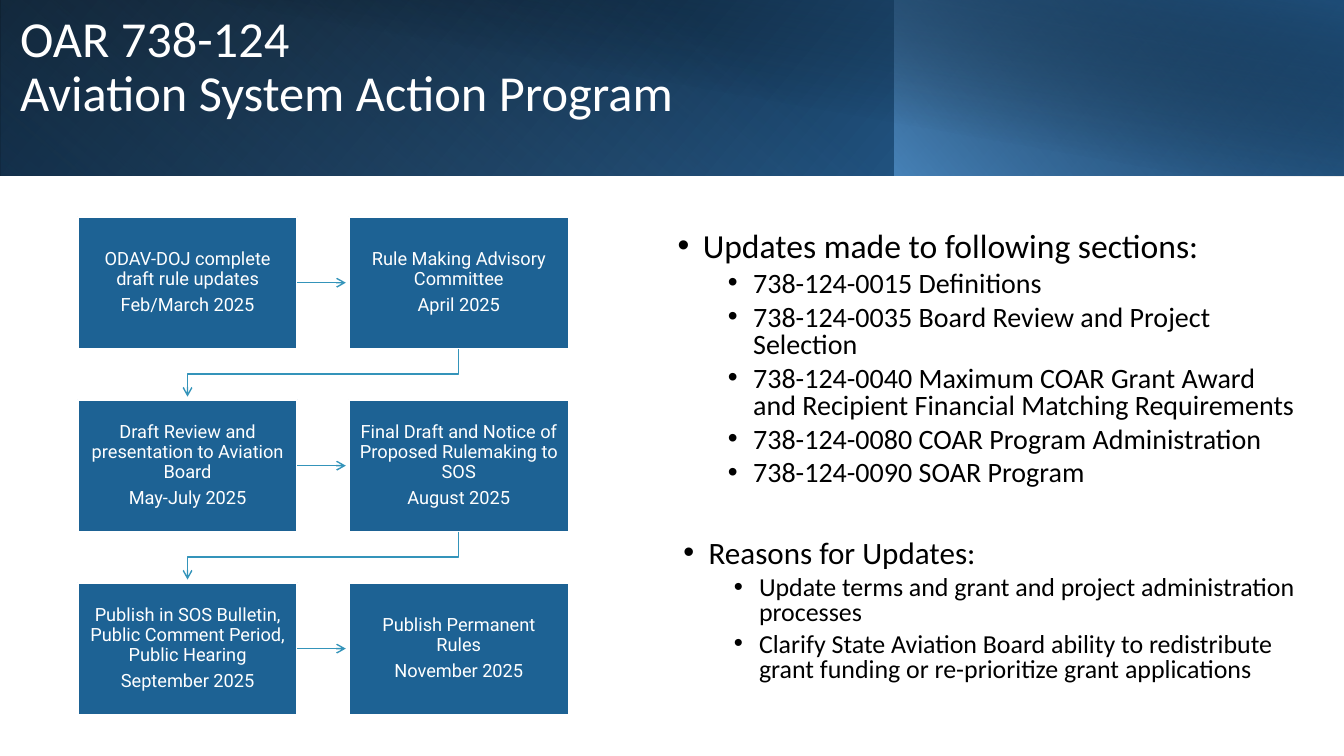
from lxml import etree
from pptx import Presentation
from pptx import util as u
from pptx.dml.color import RGBColor
from pptx.enum import shapes, text
from pptx.oxml.ns import qn

TITLE = "OAR 738-124\vAviation System Action Program"
SECTIONS = [
    "Updates made to following sections:",
    "738-124-0015 Definitions",
    "738-124-0035 Board Review and Project Selection",
    "738-124-0040 Maximum COAR Grant Award and Recipient Financial Matching Requirements",
    "738-124-0080 COAR Program Administration",
    "738-124-0090 SOAR Program",
]
REASONS = [
    "Reasons for Updates:",
    "Update terms and grant and project administration processes",
    "Clarify State Aviation Board ability to redistribute grant funding "
    "or re-prioritize grant applications",
]
STEPS = [
    ("ODAV-DOJ complete draft rule updates", "Feb/March 2025"),
    ("Rule Making Advisory Committee", "April 2025"),
    ("Draft Review and presentation to Aviation Board", "May-July 2025"),
    ("Final Draft and Notice of Proposed Rulemaking to SOS", "August 2025"),
    ("Publish in SOS Bulletin, Public Comment Period, Public Hearing", "September 2025"),
    ("Publish Permanent Rules", "November 2025"),
]
# left, width, height, rotation, flipped, clockwise angle, (position %, colour, opacity %)
BANDS = [
    (0, 13.33, 1.74, 0, True, 140, [(0, "000000", 100), (100, "2E75B6", 100)]),
    (0, 8.88, 1.74, 180, True, 230, [(20, "5B9BD5", 0), (100, "1F4E79", 55)]),
    (8.87, 4.46, 1.74, 0, True, 220, [(0, "5B9BD5", 66), (100, "000000", 30)]),
    (0.5, 12.83, 1.75, 0, False, 280, [(50, "000000", 0), (99, "1F4E79", 52)]),
]
BOX_WIDTH, BOX_HEIGHT = 2.18, 1.31
FLOW_LEFT, FLOW_TOP = 0.77, 2.15
COLUMN_STEP, ROW_STEP = 2.69, 3.63 / 2
ARROW_GAP = 0.03
BLUE, TEAL, WHITE, BLACK = "1D6294", "3494BA", "FFFFFF", "000000"


def color(value):
    return RGBColor.from_string(value)


def place(shape, left, top, width, height):
    shape.left, shape.top = u.Inches(left), u.Inches(top)
    shape.width, shape.height = u.Inches(width), u.Inches(height)


def format_runs(paragraph, font, size, value):
    for run in paragraph.runs:
        run.font.name, run.font.size = font, u.Pt(size)
        run.font.color.rgb = color(value)


def add_band(slide, left, width, height, rotation, flipped, angle, stops):
    band = slide.shapes.add_shape(
        shapes.MSO_SHAPE.RECTANGLE, u.Inches(left), 0, u.Inches(width), u.Inches(height))
    band.shadow.inherit = False
    band.line.fill.background()
    band.rotation = rotation
    if flipped:
        band._element.spPr.find(qn("a:xfrm")).set("flipH", "1")
    band.fill.gradient()
    band.fill.gradient_angle = 360 - angle
    for stop, (position, value, _) in zip(band.fill.gradient_stops, stops):
        stop.position = position / 100
        stop.color.rgb = color(value)
    for element, (_, _, opacity) in zip(band._element.spPr.iter(qn("a:srgbClr")), stops):
        etree.SubElement(element, qn("a:alpha"), val=str(opacity * 1000))


def fill_list(shape, lines, head_size, item_size):
    """Write a bulleted heading followed by second-level bullets."""
    frame = shape.text_frame
    frame.word_wrap = True
    frame.auto_size = text.MSO_AUTO_SIZE.NONE
    frame.text = "\n".join(lines)
    for index, paragraph in enumerate(frame.paragraphs):
        item = index > 0
        paragraph.level = int(item)
        paragraph.line_spacing = 0.8
        paragraph.space_before = u.Pt(5 if item else 10)
        format_runs(paragraph, "Calibri", item_size if item else head_size, BLACK)
        properties = paragraph._p.get_or_add_pPr()
        properties.set("marL", str(u.Inches(0.75 if item else 0.25)))
        properties.set("indent", str(u.Inches(-0.25)))
        etree.SubElement(properties, qn("a:buFont"), typeface="Arial")
        etree.SubElement(properties, qn("a:buChar"), char="•")


def add_step(slide, left, top, lines):
    box = slide.shapes.add_shape(
        shapes.MSO_SHAPE.RECTANGLE, u.Inches(left), u.Inches(top),
        u.Inches(BOX_WIDTH), u.Inches(BOX_HEIGHT))
    box.shadow.inherit = False
    box.fill.solid()
    box.fill.fore_color.rgb = color(BLUE)
    box.line.color.rgb = color(WHITE)
    box.line.width = u.Pt(1.5)
    frame = box.text_frame
    frame.word_wrap = True
    frame.vertical_anchor = text.MSO_ANCHOR.MIDDLE
    frame.margin_left = frame.margin_right = u.Inches(0.1)
    frame.margin_top = frame.margin_bottom = u.Inches(0.1)
    frame.text = "\n".join(lines)
    for paragraph in frame.paragraphs:
        paragraph.alignment = text.PP_ALIGN.CENTER
        paragraph.line_spacing = 0.9
        paragraph.space_after = u.Pt(4.5)
        format_runs(paragraph, "Roboto", 13, WHITE)
    return box


def style_arrow(arrow):
    arrow.line.color.rgb = color(TEAL)
    arrow.line.width = u.Pt(1)
    etree.SubElement(arrow.line._get_or_add_ln(), qn("a:tailEnd"), type="arrow")
    etree.SubElement(arrow._element.spPr, qn("a:effectLst"))


def add_arrow_across(slide, box, left, top):
    middle = u.Inches(top + BOX_HEIGHT / 2)
    arrow = slide.shapes.add_connector(
        shapes.MSO_CONNECTOR.STRAIGHT, u.Inches(left + BOX_WIDTH), middle,
        u.Inches(left + COLUMN_STEP - ARROW_GAP), middle)
    arrow.begin_connect(box, 3)
    style_arrow(arrow)


def add_arrow_to_next_row(slide, left, top):
    start_x = left + BOX_WIDTH / 2
    end_x = start_x - COLUMN_STEP
    start_y, end_y = top + BOX_HEIGHT, top + ROW_STEP - ARROW_GAP
    bend_y = (start_y + top + ROW_STEP) / 2
    points = [(start_x, bend_y), (end_x, bend_y), (end_x, end_y)]
    builder = slide.shapes.build_freeform(u.Inches(start_x), u.Inches(start_y))
    builder.add_line_segments([(u.Inches(x), u.Inches(y)) for x, y in points], close=False)
    arrow = builder.convert_to_shape()
    arrow.fill.background()
    style_arrow(arrow)


def main():
    presentation = Presentation()
    presentation.slide_width = u.Inches(13.33)
    presentation.slide_height = u.Inches(7.5)
    slide = presentation.slides.add_slide(presentation.slide_layouts[1])
    title, sections = slide.placeholders

    for band in BANDS:
        add_band(slide, *band)

    slide.shapes._spTree.append(title._element)  # bring the title in front of the bands
    place(title, 0.1, 0.11, 10.82, 1.13)
    frame = title.text_frame
    frame.text = TITLE
    frame.auto_size = text.MSO_AUTO_SIZE.NONE
    frame.vertical_anchor = text.MSO_ANCHOR.MIDDLE
    heading = frame.paragraphs[0]
    heading.alignment = text.PP_ALIGN.LEFT
    heading.line_spacing = 0.9
    format_runs(heading, "Calibri", 36, WHITE)

    place(sections, 6.62, 2.26, 6.39, 2.81)
    fill_list(sections, SECTIONS, 24, 20)
    reasons = slide.shapes.add_textbox(
        u.Inches(6.68), u.Inches(5.31), u.Inches(6.47), u.Inches(1.7))
    fill_list(reasons, REASONS, 22.2, 18.5)

    for index, lines in enumerate(STEPS):
        row, column = divmod(index, 2)
        left, top = FLOW_LEFT + column * COLUMN_STEP, FLOW_TOP + row * ROW_STEP
        box = add_step(slide, left, top, lines)
        if column == 0:
            add_arrow_across(slide, box, left, top)
        elif index < len(STEPS) - 1:
            add_arrow_to_next_row(slide, left, top)

    presentation.save("out.pptx")


if __name__ == "__main__":
    main()
